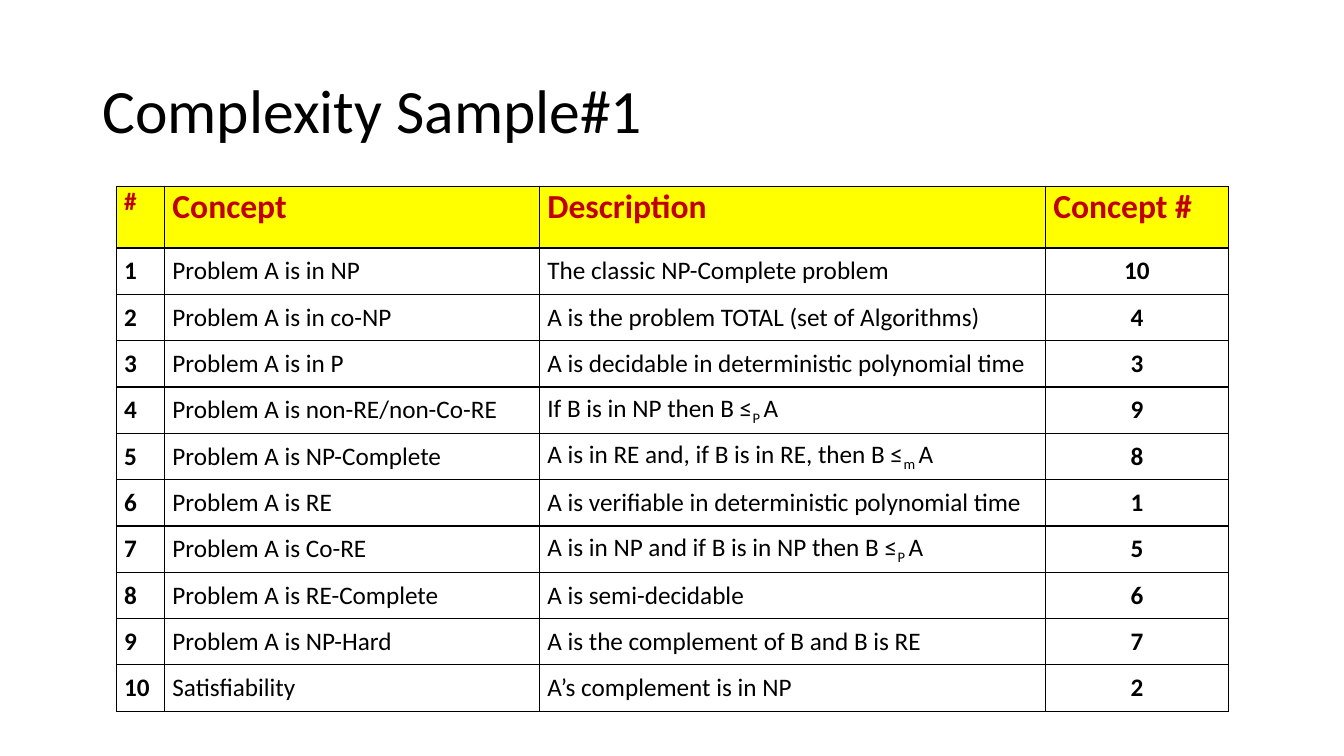
from dataclasses import dataclass

from lxml.etree import SubElement
from pptx import Presentation
from pptx.dml.color import RGBColor
from pptx.enum.text import MSO_ANCHOR as Anchor, PP_ALIGN as Align
from pptx.oxml.ns import qn
from pptx.slide import Slide
from pptx.table import _Cell as Cell
from pptx.text.text import _Paragraph as Paragraph, _Run as Run
from pptx.util import Pt

BLACK = RGBColor(0x00, 0x00, 0x00)
RED = RGBColor(0xC0, 0x00, 0x00)
YELLOW = RGBColor(0xFF, 0xFF, 0x00)
FONT = "Calibri"

COLUMN_WIDTHS = (34.6, 267.8, 361.4, 130.3)
HEADER_HEIGHT = 44
ROW_HEIGHT = 33.1


@dataclass(frozen=True)
class Match:
    concept: str
    description: str
    answer: int
    reduction: str = ""


HEADINGS = (("#", 18), ("Concept", 24), ("Description", 24), ("Concept #", 24))
MATCHES = (
    Match("Problem A is in NP", "The classic NP-Complete problem", 10),
    Match("Problem A is in co-NP", "A is the problem TOTAL (set of Algorithms)", 4),
    Match("Problem A is in P", "A is decidable in deterministic polynomial time", 3),
    Match("Problem A is non-RE/non-Co-RE", "If B is in NP then B ≤", 9, "P"),
    Match("Problem A is NP-Complete", "A is in RE and, if B is in RE, then B ≤", 8, "m"),
    Match("Problem A is RE", "A is verifiable in deterministic polynomial time", 1),
    Match("Problem A is Co-RE", "A is in NP and if B is in NP then B ≤", 5, "P"),
    Match("Problem A is RE-Complete", "A is semi-decidable", 6),
    Match("Problem A is NP-Hard", "A is the complement of B and B is RE", 7),
    Match("Satisfiability", "A’s complement is in NP", 2),
)


def add_run(paragraph: Paragraph, text: str, size: float = 18,
            bold: bool = False, color: RGBColor = BLACK) -> Run:
    run = paragraph.add_run()
    run.text = text
    run.font.name = FONT
    run.font.size = Pt(size)
    run.font.bold = bold
    run.font.color.rgb = color
    return run


def draw_borders(cell: Cell) -> None:
    properties = cell._tc.get_or_add_tcPr()
    for side in ("a:lnL", "a:lnR", "a:lnT", "a:lnB"):
        border = SubElement(properties, qn(side), w=str(Pt(1)))
        fill = SubElement(border, qn("a:solidFill"))
        SubElement(fill, qn("a:srgbClr"), val=str(BLACK))


def format_cell(cell: Cell, anchor: Anchor) -> Paragraph:
    cell.margin_left = cell.margin_right = Pt(5.4)
    cell.margin_top = cell.margin_bottom = Pt(0)
    cell.vertical_anchor = anchor
    draw_borders(cell)
    cell.fill.background()
    return cell.text_frame.paragraphs[0]


def fill_title(slide: Slide) -> None:
    title = slide.shapes.title
    title.left, title.top, title.width, title.height = Pt(66), Pt(28.8), Pt(828), Pt(104.4)
    title.text_frame.vertical_anchor = Anchor.MIDDLE
    heading = title.text_frame.paragraphs[0]
    heading.alignment = Align.LEFT
    heading.line_spacing = 0.9
    add_run(heading, "Complexity Sample#1", 44)


def add_matches(slide: Slide) -> None:
    table = slide.shapes.add_table(
        len(MATCHES) + 1, len(COLUMN_WIDTHS), Pt(83.2), Pt(133.2),
        Pt(sum(COLUMN_WIDTHS)), Pt(HEADER_HEIGHT + len(MATCHES) * ROW_HEIGHT)).table
    table.first_row = table.horz_banding = False
    for column, width in zip(table.columns, COLUMN_WIDTHS):
        column.width = Pt(width)
    for row in table.rows:
        row.height = Pt(ROW_HEIGHT)
    table.rows[0].height = Pt(HEADER_HEIGHT)

    for cell, (text, size) in zip(table.rows[0].cells, HEADINGS):
        add_run(format_cell(cell, Anchor.TOP), text, size, True, RED)
        cell.fill.solid()
        cell.fill.fore_color.rgb = YELLOW

    for number, match in enumerate(MATCHES, 1):
        label, concept, description, answer = (
            format_cell(cell, Anchor.MIDDLE) for cell in table.rows[number].cells)
        add_run(label, str(number), bold=True)
        add_run(concept, match.concept)
        add_run(description, match.description)
        if match.reduction:
            subscript = add_run(description, match.reduction)
            subscript.font._element.set("baseline", "-25000")
            add_run(description, " ", 11)
            add_run(description, "A")
        answer.alignment = Align.CENTER
        add_run(answer, str(match.answer), bold=True)


def main() -> None:
    deck = Presentation()
    deck.slide_width, deck.slide_height = Pt(960), Pt(540)
    slide = deck.slides.add_slide(deck.slide_layouts[5])
    fill_title(slide)
    add_matches(slide)
    deck.save("out.pptx")


if __name__ == "__main__":
    main()
